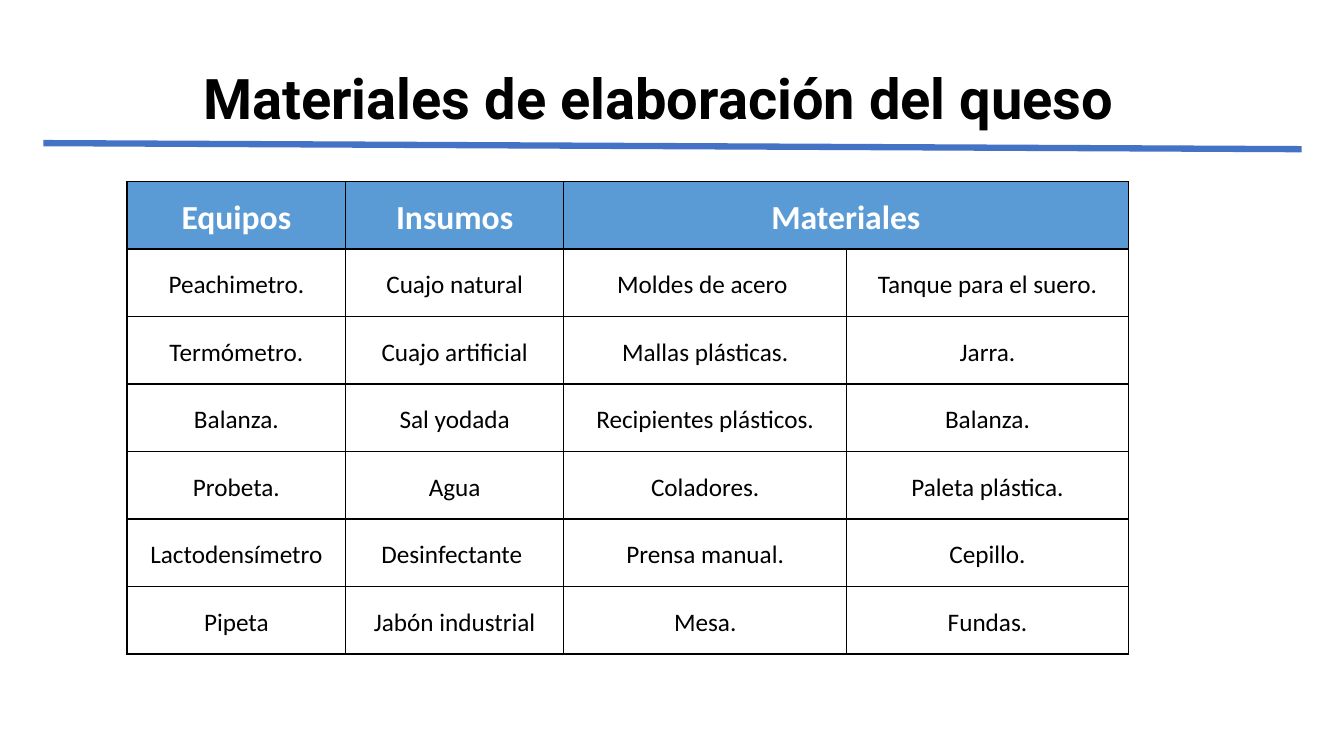
from lxml import etree
from pptx import Presentation, util as u
from pptx.dml.color import RGBColor
from pptx.enum import shapes, text
from pptx.oxml import ns

PX = 9144
WIDTHS = [217, 216, 281, 279]
ROW = 67
HEADS = ["Equipos", "Insumos", "Materiales", ""]
ITEMS = [
    ["Peachimetro.", "Cuajo natural", "Moldes de acero ", "Tanque para el suero."],
    ["Termómetro.", "Cuajo artificial", "Mallas plásticas.", "Jarra."],
    ["Balanza.", "Sal yodada", "Recipientes plásticos.", "Balanza."],
    ["Probeta.", "Agua", "Coladores.", "Paleta plástica."],
    ["Lactodensímetro", "Desinfectante ", "Prensa manual.", "Cepillo."],
    ["Pipeta", "Jabón industrial", "Mesa.", "Fundas."],
]


def px(n):
    """Turn px, 100 to the inch, into EMU."""
    return u.Emu(n * PX)


def color(code):
    """Turn a hex string into a colour."""
    return RGBColor.from_string(code)


def write(frame, words, size=18, font="Calibri", ink="000000", bold=False, lead=1.15, gap=12):
    """Put one centred, formatted paragraph into a text frame."""
    para = frame.paragraphs[0]
    para.alignment = text.PP_ALIGN.CENTER
    para.line_spacing = lead
    para.space_before = para.space_after = u.Pt(gap)
    run = para.add_run()
    run.text = words
    run.font.size = u.Pt(size)
    run.font.name = font
    run.font.bold = bold
    run.font.color.rgb = color(ink)


class Deck:
    """Hold the style and the current slide."""

    head = "5B9BD5"
    body = "FFFFFF"
    edge = "000000"
    rule = "4472C4"

    def __init__(self):
        """Start a wide deck with one title-only slide."""
        self.file = Presentation()
        self.file.slide_width, self.file.slide_height = px(1333), px(750)
        self.slide = self.file.slides.add_slide(self.file.slide_layouts[5])

    def title(self, words, x, y, w, h):
        """Place and fill the title."""
        box = self.slide.shapes.title
        box.left, box.top, box.width, box.height = map(px, (x, y, w, h))
        frame = box.text_frame
        frame.word_wrap = True
        frame.auto_size = text.MSO_AUTO_SIZE.NONE
        frame.vertical_anchor = text.MSO_ANCHOR.MIDDLE
        write(frame, words, size=40, font="Roboto", bold=True, lead=0.9, gap=0)

    def line(self, x1, y1, x2, y2, width):
        """Draw a straight line without shadow."""
        link = self.slide.shapes.add_connector(
            shapes.MSO_CONNECTOR.STRAIGHT, *map(px, (x1, y1, x2, y2)))
        link.line.color.rgb = color(self.rule)
        link.line.width = u.Pt(width)
        etree.SubElement(link._element.spPr, ns.qn("a:effectLst"))

    def border(self, cell):
        """Give a cell a thin line on every side."""
        props = cell._tc.get_or_add_tcPr()
        for side in "LRTB":
            line = etree.SubElement(props, ns.qn("a:ln" + side), w=str(u.Pt(1)))
            fill = etree.SubElement(line, ns.qn("a:solidFill"))
            etree.SubElement(fill, ns.qn("a:srgbClr"), val=self.edge)

    def cell(self, cell, words, fill, **form):
        """Format and fill one table cell."""
        self.border(cell)
        cell.fill.solid()
        cell.fill.fore_color.rgb = color(fill)
        cell.margin_left = cell.margin_right = px(7)
        cell.margin_top = cell.margin_bottom = 0
        cell.vertical_anchor = text.MSO_ANCHOR.MIDDLE
        if words:
            write(cell.text_frame, words, **form)

    def table(self, heads, items, x, y):
        """Build the table, its last heading spanning two columns."""
        rows = [heads] + items
        grid = self.slide.shapes.add_table(
            len(rows), len(WIDTHS), px(x), px(y),
            px(sum(WIDTHS)), px(ROW * len(rows))).table
        for col, wide in zip(grid.columns, WIDTHS):
            col.width = px(wide)
        for r, row in enumerate(rows):
            grid.rows[r].height = px(ROW)
            form = {} if r else {"size": 24, "ink": "FFFFFF", "bold": True}
            for c, words in enumerate(row):
                self.cell(grid.cell(r, c), words, self.body if r else self.head, **form)
        grid.cell(0, 2).merge(grid.cell(0, 3))


def main():
    """Build and save the slide."""
    deck = Deck()
    deck.title("Materiales de elaboración del queso", 78, 65, 1150, 72)
    deck.table(HEADS, ITEMS, 126, 180)
    deck.line(43, 142, 1291, 148, 4.5)
    deck.file.save("out.pptx")


if __name__ == "__main__":
    main()
